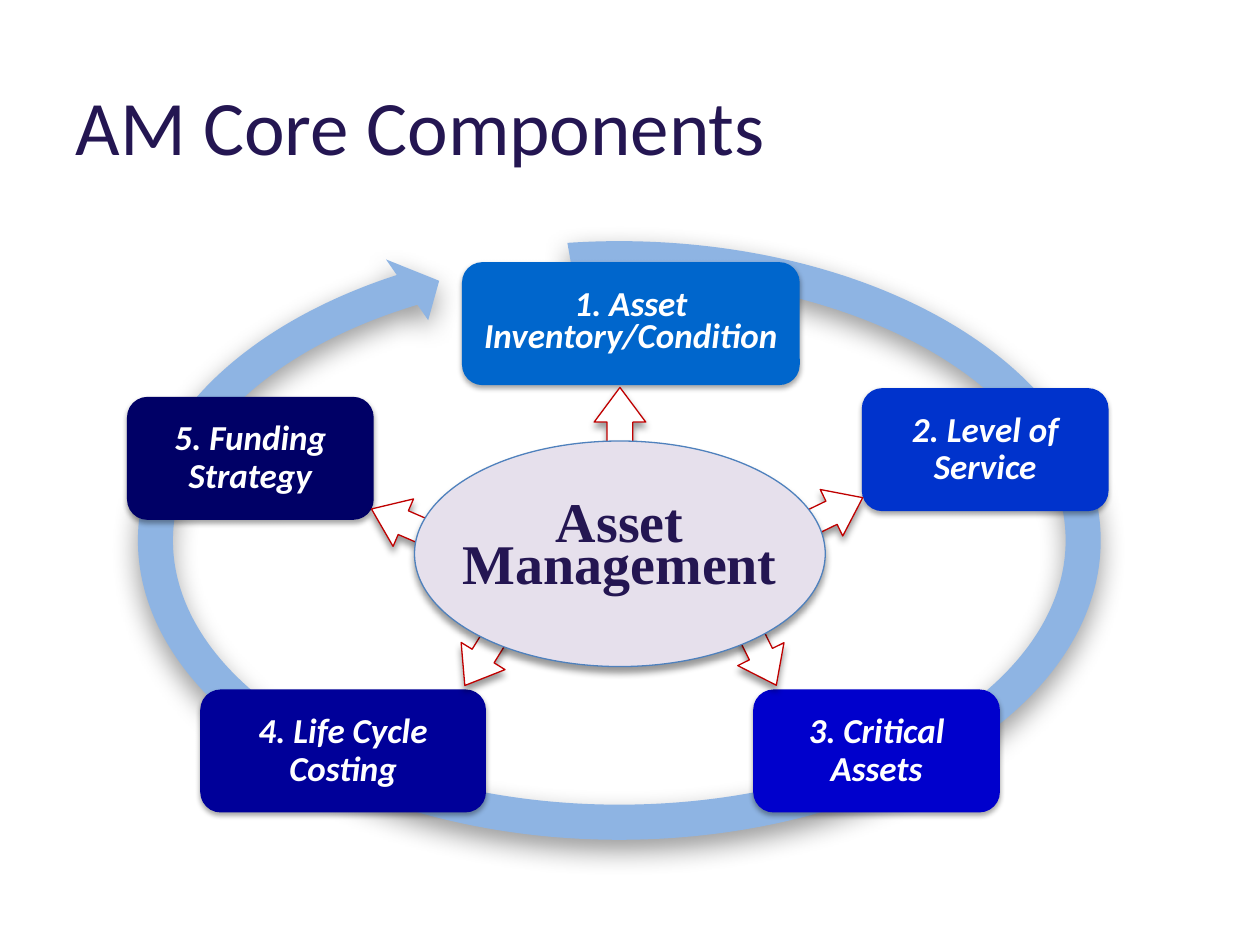
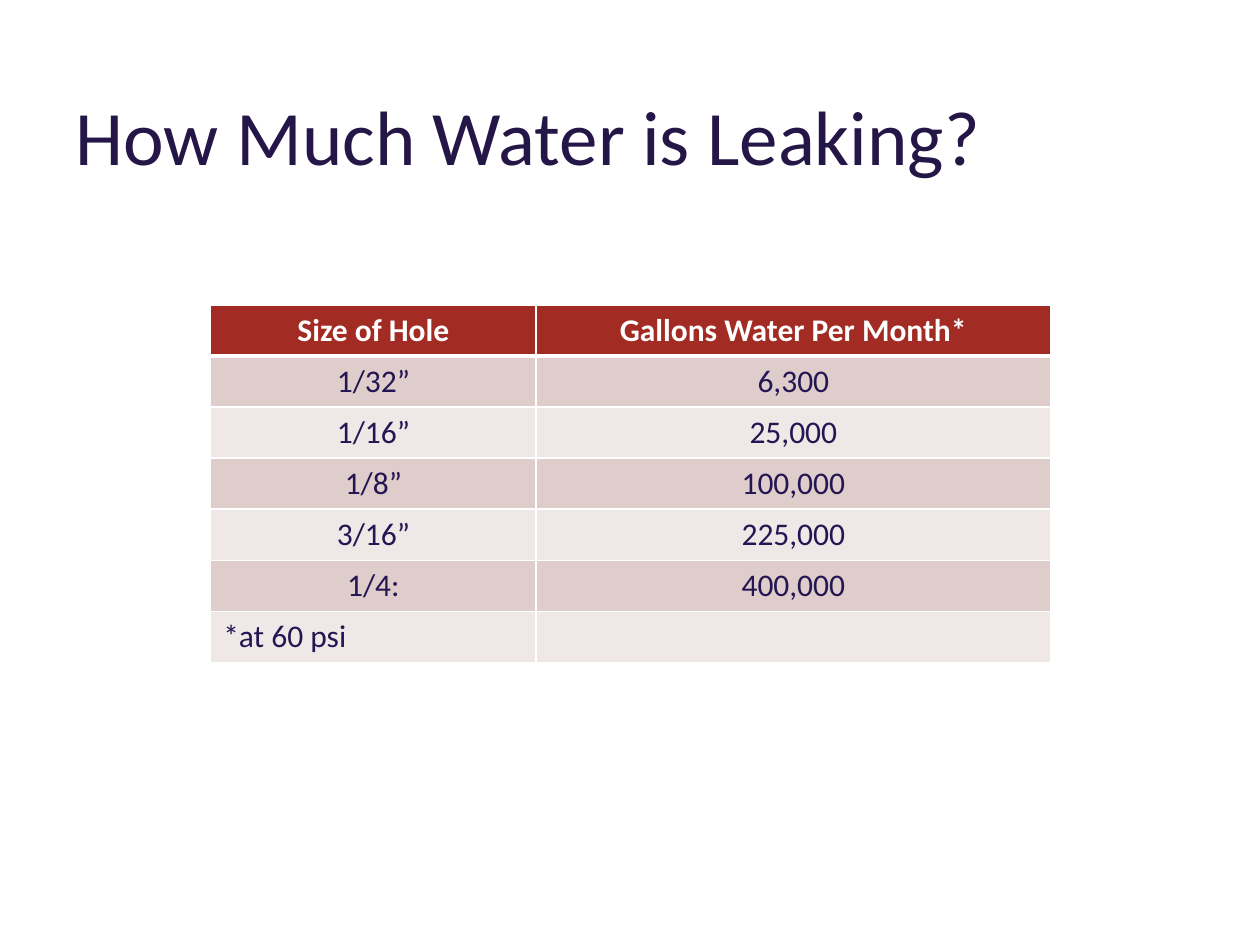
from pptx import Presentation
from pptx.dml.color import RGBColor
from pptx.enum.shapes import MSO_SHAPE
from pptx.enum.text import MSO_ANCHOR, MSO_AUTO_SIZE, PP_ALIGN
from pptx.oxml import parse_xml
from pptx.oxml.ns import nsdecls
from pptx.util import Pt

LEFT, CENTER = PP_ALIGN.LEFT, PP_ALIGN.CENTER
MIDDLE = MSO_ANCHOR.MIDDLE
ROUNDED, ARROW = MSO_SHAPE.ROUNDED_RECTANGLE, MSO_SHAPE.RIGHT_ARROW
RING, OVAL = MSO_SHAPE.CIRCULAR_ARROW, MSO_SHAPE.OVAL

COLORS = {
    "ink": "241652", "title_two": "241647", "white": "FFFFFF", "ring": "8EB4E3",
    "red": "C00000", "hub": "E6E0EC", "hub_line": "4F81BD",
    "header": "A22B23", "dark_band": "DFCDCC", "light_band": "F0E7E7",
}
TITLE_FONT = {"name": "Calibri", "size": Pt(44)}
LABEL_FONT = {"name": "Calibri", "size": Pt(20), "bold": True, "italic": True}
HUB_FONT = {"name": "Times New Roman", "size": Pt(32), "bold": True}
CELL_FONT = {"name": "Calibri", "size": Pt(18)}

# Shadows: opacity in percent, blur and distance in points
RING_SHADOW, BOX_SHADOW, SOFT_SHADOW = (40, 15, 6), (35, 3.1, 1.8), (40, 4, 3)


def write(frame, text, color, font_format, para_format):
    """Fill a text frame and format each of its paragraphs and runs."""
    frame.text = text
    for para in frame.paragraphs:
        for name, value in para_format.items():
            setattr(para, name, value)
        for span in para.runs:
            for name, value in font_format.items():
                setattr(span.font, name, value)
            span.font.color.rgb = RGBColor.from_string(color)


def add_figure(page, kind, bounds, fill, shadow, line=None, adjustments=()):
    """Add a filled preset shape with a shadow that falls straight down."""
    figure = page.shapes.add_shape(kind, *map(Pt, bounds))
    for index, value in enumerate(adjustments):
        figure.adjustments[index] = value
    figure.fill.solid()
    figure.fill.fore_color.rgb = RGBColor.from_string(fill)
    if line:
        figure.line.color.rgb = RGBColor.from_string(line)
        figure.line.width = Pt(0.75)
    else:
        figure.line.fill.background()
    figure.shadow.inherit = False
    opacity, blur, distance = shadow
    effects = figure._element.spPr.find("{*}effectLst")
    effects.append(parse_xml(
        f'<a:outerShdw {nsdecls("a")} blurRad="{Pt(blur)}" dist="{Pt(distance)}" '
        f'dir="5400000" rotWithShape="0"><a:srgbClr val="000000">'
        f'<a:alpha val="{opacity * 1000}"/></a:srgbClr></a:outerShdw>'))
    return figure


deck = Presentation()
deck.slide_width, deck.slide_height = Pt(720), Pt(540)

# Both pages and their titles
pages = []
for text, color, spacing in (
    ("AM Core Components", COLORS["ink"], Pt(42)),
    ("How Much Water is Leaking?", COLORS["title_two"], 1.0),
):
    page = deck.slides.add_slide(deck.slide_layouts[5])
    title = page.shapes.title
    title.left, title.top, title.width, title.height = map(Pt, (36, 41.8, 648, 69.8))
    title.text_frame.auto_size = MSO_AUTO_SIZE.NONE
    title.text_frame.vertical_anchor = MIDDLE
    write(title.text_frame, text, color, TITLE_FONT,
          {"alignment": LEFT, "line_spacing": spacing})
    pages.append(page)
cycle_page, leak_page = pages

# Cycle of five components
add_figure(cycle_page, RING, (67.7, 126.7, 572.4, 364.3), COLORS["ring"], RING_SHADOW,
           adjustments=(0.055, 3.307, 137.847, 156.065, 0.058))

# Label, fill, box left, top, width, line spacing; arrow left, top, width, rotation
components = [
    ("1. Asset Inventory/Condition", "0066CC", 264, 149.8, 193, Pt(18),
     337.7, 223.2, 33.1, 270),
    ("2. Level of Service", "0033CC", 492.5, 221.8, 141, 0.9,
     460.1, 277.2, 34.6, 334.2),
    ("5. Funding Strategy", "000066", 72.6, 226.8, 141, 0.9,
     211, 282.2, 31, 203.3),
    ("4. Life Cycle Costing", "000099", 114.4, 394, 163.3, 0.9,
     257.8, 362.9, 33.1, 121.8),
    ("3. Critical Assets", "0000CC", 430.4, 394, 141, 0.9,
     417.6, 360.7, 36, 63.6),
]
for (label, fill, left, top, width, spacing,
     arrow_left, arrow_top, arrow_width, rotation) in components:
    box = add_figure(cycle_page, ROUNDED, (left, top, width, 70.3), fill, BOX_SHADOW)
    frame = box.text_frame
    frame.word_wrap = True
    frame.vertical_anchor = MIDDLE
    for side in ("left", "top", "right", "bottom"):
        setattr(frame, f"margin_{side}", Pt(7.2))
    write(frame, label, COLORS["white"], LABEL_FONT,
          {"alignment": CENTER, "line_spacing": spacing, "space_after": Pt(7)})
    arrow = add_figure(cycle_page, ARROW, (arrow_left, arrow_top, arrow_width, 29.5),
                       COLORS["white"], SOFT_SHADOW, COLORS["red"], (0.5, 0.671))
    arrow.rotation = rotation

add_figure(cycle_page, OVAL, (236.9, 252, 234.7, 128.9), COLORS["hub"], SOFT_SHADOW,
           COLORS["hub_line"])
hub_label = cycle_page.shapes.add_textbox(*map(Pt, (257, 288.7, 194.4, 54.7)))
hub_label.text_frame.word_wrap = False
write(hub_label.text_frame, "Asset\nManagement", COLORS["ink"], HUB_FONT,
      {"alignment": CENTER, "line_spacing": Pt(24)})

# Leak table
leaks = [
    ("Size of Hole", "Gallons Water Per Month*"),
    ("1/32”", "6,300"),
    ("1/16”", "25,000"),
    ("1/8”", "100,000"),
    ("3/16”", "225,000"),
    ("1/4:", "400,000"),
    ("*at 60 psi", ""),
]
table = leak_page.shapes.add_table(
    len(leaks), 2, *map(Pt, (120.4, 174.2, 480, 204.4))).table
table.columns[0].width, table.columns[1].width = Pt(186), Pt(294)
for row_index, values in enumerate(leaks):
    table.rows[row_index].height = Pt(29.2)
    is_header = row_index == 0
    band = COLORS["dark_band" if row_index % 2 else "light_band"]
    for column_index, value in enumerate(values):
        cell = table.cell(row_index, column_index)
        cell.fill.solid()
        cell.fill.fore_color.rgb = RGBColor.from_string(
            COLORS["header"] if is_header else band)
        write(cell.text_frame, value, COLORS["white" if is_header else "ink"],
              {**CELL_FONT, "bold": is_header},
              {"alignment": LEFT if value.startswith("*") else CENTER})
        borders = {"L": 0.96, "R": 0.96, "T": 3 if row_index == 1 else 0.96,
                   "B": 3 if is_header else 0.96}
        for position, (side, width) in enumerate(borders.items()):
            cell._tc.tcPr.insert(position, parse_xml(
                f'<a:ln{side} {nsdecls("a")} w="{Pt(width)}"><a:solidFill>'
                f'<a:srgbClr val="{COLORS["white"]}"/></a:solidFill></a:ln{side}>'))

deck.save("out.pptx")
